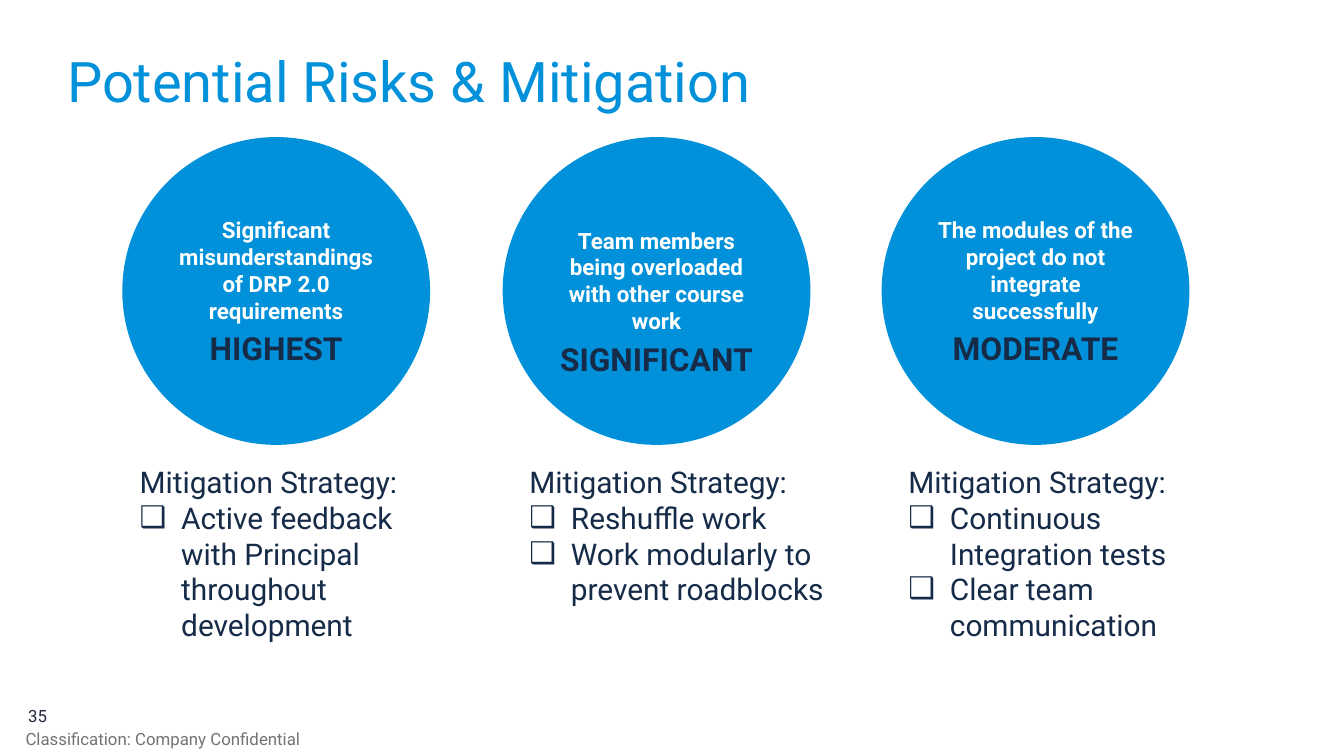
import pptx
import pptx.dml.color
import pptx.enum.shapes
import pptx.enum.text
import pptx.oxml.ns
import pptx.util
from lxml import etree

Inches = pptx.util.Inches
Pt = pptx.util.Pt
ALIGN = pptx.enum.text.PP_ALIGN
ANCHOR = pptx.enum.text.MSO_ANCHOR

FONT = "Roboto"
COLORS = {
    "blue": "0091DA",
    "navy": "162B48",
    "white": "FFFFFF",
    "gray": "737373",
    "number": "23273F",
}

DIAMETER = 2.29

RISKS = [
    {
        "risk": "Significant misunderstandings of DRP 2.0 requirements",
        "level": "HIGHEST",
        "left": 0.91,
        "label_top": 1.4,
        "plan_left": 0.94,
        "plan_size": (2.52, 1.45),
        "steps": ["Active feedback with Principal throughout development"],
    },
    {
        "risk": "Team members being overloaded with other course work",
        "level": "SIGNIFICANT",
        "left": 3.74,
        "label_top": 1.48,
        "plan_left": 3.84,
        "plan_size": (2.72, 1.18),
        "steps": ["Reshuffle work", "Work modularly to prevent roadblocks"],
    },
    {
        "risk": "The modules of the project do not integrate successfully",
        "level": "MODERATE",
        "left": 6.56,
        "label_top": 1.4,
        "plan_left": 6.66,
        "plan_size": (2.72, 1.45),
        "steps": ["Continuous Integration tests", "Clear team communication"],
    },
]


def rgb(name):
    return pptx.dml.color.RGBColor.from_string(COLORS[name])


def add_box(s, left, top, width, height, anchor=ANCHOR.TOP, inset=True):
    sp = s.shapes.add_textbox(Inches(left), Inches(top), Inches(width), Inches(height))
    tf = sp.text_frame
    tf.word_wrap = True
    tf.vertical_anchor = anchor
    if not inset:
        tf.margin_left = tf.margin_right = tf.margin_top = tf.margin_bottom = 0
    return tf


def add_bullet(p, char="❑", indent=0.31):
    pPr = p._p.get_or_add_pPr()
    pPr.set("marL", str(Inches(indent)))
    pPr.set("indent", str(-Inches(indent)))
    etree.SubElement(pPr, pptx.oxml.ns.qn("a:buFont")).set("typeface", FONT)
    etree.SubElement(pPr, pptx.oxml.ns.qn("a:buChar")).set("char", char)


def write(tf, text, size=16, color="navy", bold=False, align=ALIGN.LEFT,
          first=True, before=None, spacing=None, bullet=False):
    p = tf.paragraphs[0] if first else tf.add_paragraph()
    p.alignment = align
    if spacing is not None:
        p.line_spacing = spacing
    if before is not None:
        p.space_before = Pt(before)
    if bullet:
        add_bullet(p)
    r = p.add_run()
    r.text = text
    r.font.name = FONT
    r.font.size = Pt(size)
    r.font.bold = bold
    r.font.color.rgb = rgb(color)


def add_circle(s, left, top):
    sp = s.shapes.add_shape(pptx.enum.shapes.MSO_SHAPE.OVAL, Inches(left), Inches(top),
                            Inches(DIAMETER), Inches(DIAMETER))
    sp.shadow.inherit = False
    sp.fill.solid()
    sp.fill.fore_color.rgb = rgb("blue")
    sp.line.fill.background()


def add_risk(s, item):
    add_circle(s, item["left"], 1.02)
    tf = add_box(s, item["left"] + 0.24, item["label_top"], 1.81, 1.54, ANCHOR.MIDDLE)
    write(tf, item["risk"], size=12, color="white", bold=True, align=ALIGN.CENTER)
    write(tf, item["level"], size=17, bold=True, align=ALIGN.CENTER, first=False, before=3)


def add_mitigation(s, item):
    tf = add_box(s, item["plan_left"], 3.4, *item["plan_size"])
    write(tf, "Mitigation Strategy:")
    for step in item["steps"]:
        write(tf, step, first=False, bullet=True)


def main():
    prs = pptx.Presentation()
    prs.slide_width = Inches(10)
    prs.slide_height = prs.slide_width * 9 // 16
    s = prs.slides.add_slide(prs.slide_layouts[6])

    write(add_box(s, 0.5, 0.44, 9, 0.58, inset=False),
          "Potential Risks & Mitigation", size=30, color="blue", spacing=0.8)
    for item in RISKS:
        add_risk(s, item)
        add_mitigation(s, item)
    write(add_box(s, 0.21, 5.1, 0.29, 0.3, ANCHOR.BOTTOM, inset=False),
          "35", size=9, color="number")
    write(add_box(s, 0.19, 5.36, 2.23, 0.27, ANCHOR.MIDDLE, inset=False),
          "Classification: Company Confidential", size=9, color="gray")

    prs.save("out.pptx")


if __name__ == "__main__":
    main()
